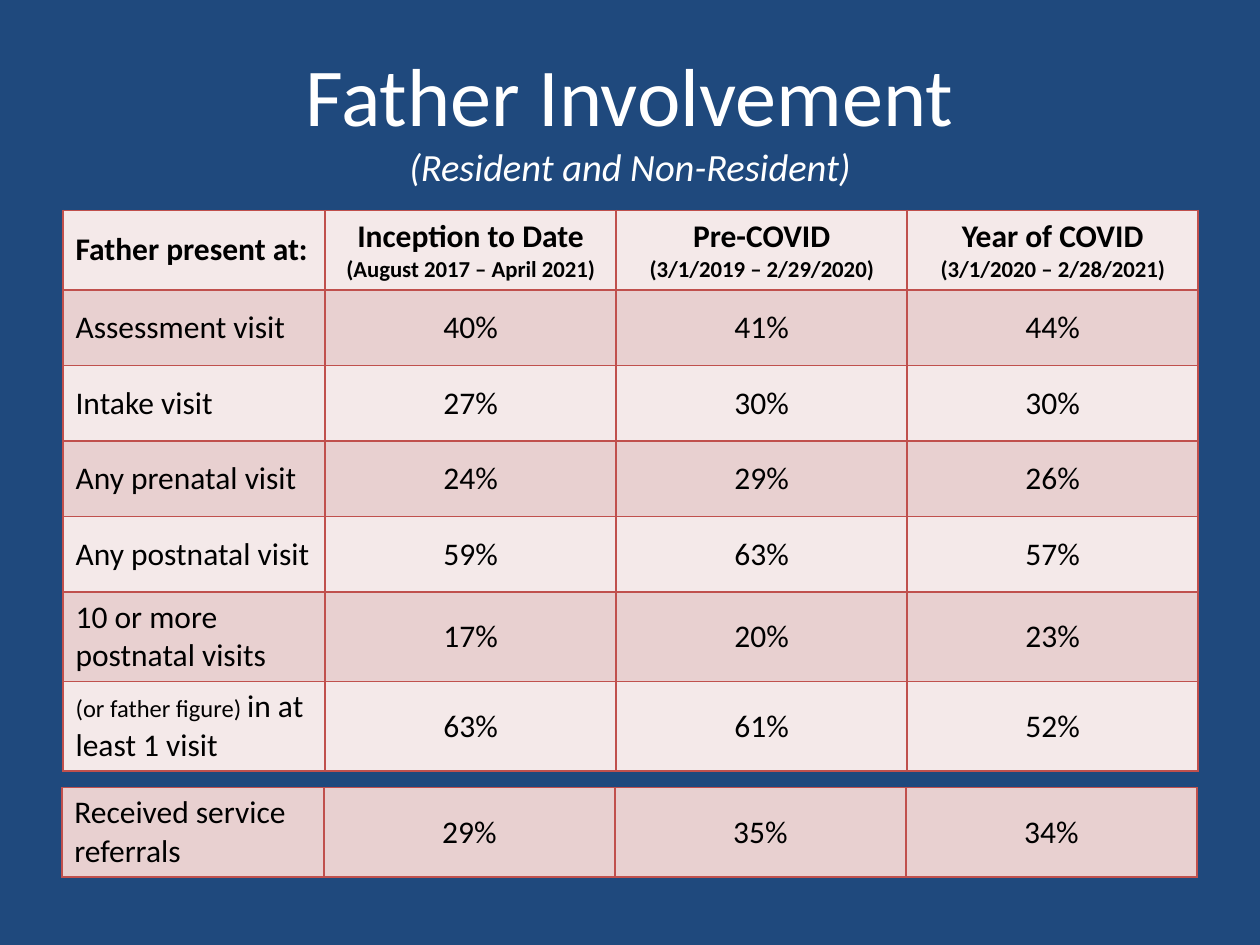
from dataclasses import dataclass

from lxml.etree import SubElement
from pptx import Presentation
from pptx.dml.color import RGBColor
from pptx.enum.text import MSO_ANCHOR as Anchor, PP_ALIGN as Align
from pptx.oxml.ns import qn
from pptx.slide import Slide
from pptx.table import _Cell as Cell
from pptx.util import Inches, Pt

FONT = "Calibri"
NAVY, WHITE, BLACK = "1F497D", "FFFFFF", "000000"
RED, PALE, ROSE = "C0504D", "F4E9E9", "E8D0D0"
COLUMN_WIDTHS = (2.08, 2.31, 2.31, 2.31)


@dataclass
class Row:
    label: str
    values: tuple[str, str, str]
    height: float = 0.6
    note: str = ""
    header: bool = False


INVOLVEMENT = [
    Row("Father present at:",
        ("Inception to Date\n(August 2017 – April 2021)",
         "Pre-COVID\n(3/1/2019 – 2/29/2020)",
         "Year of COVID\n(3/1/2020 – 2/28/2021)"), 0.63, header=True),
    Row("Assessment visit", ("40%", "41%", "44%")),
    Row("Intake visit", ("27%", "30%", "30%")),
    Row("Any prenatal visit", ("24%", "29%", "26%")),
    Row("Any postnatal visit", ("59%", "63%", "57%")),
    Row("10 or more postnatal visits", ("17%", "20%", "23%"), 0.71),
    Row("in at least 1 visit", ("63%", "61%", "52%"), 0.71, note="(or father figure) "),
]
REFERRALS = [Row("Received service referrals", ("29%", "35%", "34%"), 0.71)]


def rgb(code: str) -> RGBColor:
    return RGBColor.from_string(code)


def style_run(run, size: float, color: str, bold: bool = False, italic: bool = False) -> None:
    font = run.font
    font.name, font.size, font.bold, font.italic = FONT, Pt(size), bold, italic
    font.color.rgb = rgb(color)


def add_borders(cell: Cell) -> None:
    properties = cell._tc.get_or_add_tcPr()
    for side in ("lnL", "lnR", "lnT", "lnB"):
        line = SubElement(properties, qn(f"a:{side}"), w=str(Pt(1)))
        SubElement(SubElement(line, qn("a:solidFill")), qn("a:srgbClr"), val=RED)


def fill_cell(cell: Cell, text: str, fill: str, align: Align, bold: bool, note: str = "") -> None:
    """Write a cell; second paragraphs and a leading note are set smaller."""
    add_borders(cell)
    cell.fill.solid()
    cell.fill.fore_color.rgb = rgb(fill)
    cell.vertical_anchor = Anchor.MIDDLE
    cell.text_frame.text = note or text
    if note:
        cell.text_frame.paragraphs[0].add_run().text = text
    for line, paragraph in enumerate(cell.text_frame.paragraphs):
        paragraph.alignment = align
        for run in paragraph.runs:
            size = 13 if line else 14 if run.text == note else 18
            style_run(run, size, BLACK, bold)


def add_rows(slide: Slide, rows: list[Row], left: float, top: float, fills: tuple[str, ...]) -> None:
    """Add a table whose row fills alternate through the given colours."""
    table = slide.shapes.add_table(
        len(rows), len(COLUMN_WIDTHS), Inches(left), Inches(top),
        Inches(sum(COLUMN_WIDTHS)), Inches(sum(row.height for row in rows))).table
    table.first_row = table.horz_banding = False
    for column, width in zip(table.columns, COLUMN_WIDTHS):
        column.width = Inches(width)
    for index, row in enumerate(rows):
        table.rows[index].height = Inches(row.height)
        fill = fills[index % len(fills)]
        fill_cell(table.cell(index, 0), row.label, fill, Align.LEFT, row.header, row.note)
        for column, value in enumerate(row.values, start=1):
            fill_cell(table.cell(index, column), value, fill, Align.CENTER, row.header)


def add_title(slide: Slide) -> None:
    frame = slide.shapes.add_textbox(Inches(0.5), Inches(0.3), Inches(9), Inches(1.25)).text_frame
    frame.word_wrap = True
    frame.vertical_anchor = Anchor.MIDDLE
    heading = frame.paragraphs[0]
    heading.text = "Father Involvement\v(Resident and Non-Resident)"
    heading.alignment = Align.CENTER
    title, subtitle = heading.runs
    style_run(title, 47, WHITE)
    style_run(subtitle, 22, WHITE, italic=True)


def main() -> None:
    deck = Presentation()
    deck.slide_width, deck.slide_height = Inches(10), Inches(7.5)
    slide = deck.slides.add_slide(deck.slide_layouts[6])
    slide.background.fill.solid()
    slide.background.fill.fore_color.rgb = rgb(NAVY)
    add_title(slide)
    add_rows(slide, INVOLVEMENT, 0.5, 1.67, (PALE, ROSE))
    add_rows(slide, REFERRALS, 0.49, 6.25, (ROSE,))
    deck.save("out.pptx")


if __name__ == "__main__":
    main()
